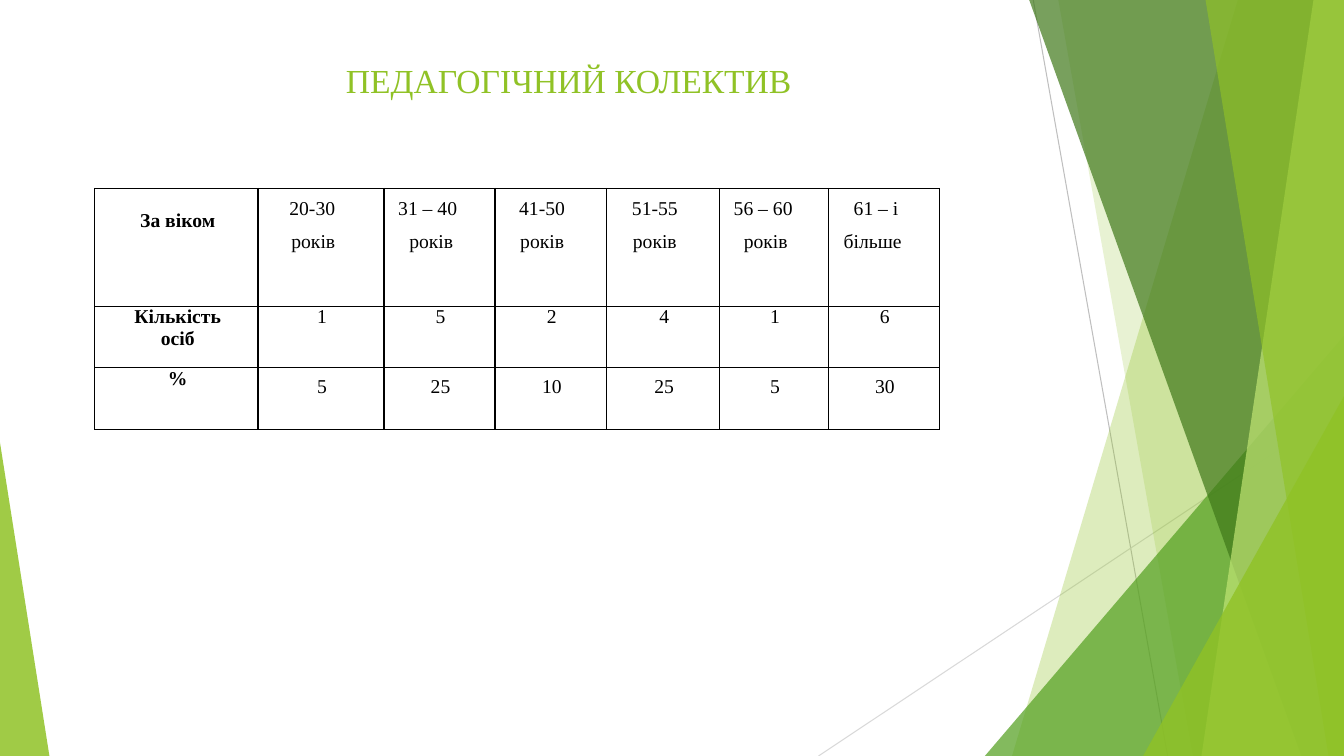
from dataclasses import dataclass

from lxml.etree import SubElement
from pptx import Presentation
from pptx.dml.color import RGBColor
from pptx.enum.shapes import MSO_CONNECTOR, MSO_SHAPE
from pptx.enum.text import PP_ALIGN
from pptx.oxml.ns import qn
from pptx.util import Inches, Pt


@dataclass(frozen=True)
class Theme:
    font: str = "Times New Roman"
    title_size: float = 24
    table_size: float = 14
    lime: str = "90C226"
    green: str = "54A021"
    forest: str = "3F7819"
    pale_lime: str = "C0E474"
    ray: str = "BFBFBF"
    light_ray: str = "D9D9D9"
    ink: str = "000000"


THEME = Theme()
SLIDE_WIDTH = Inches(13.333)
SLIDE_HEIGHT = Inches(7.5)

COLUMN_SHARES = (12.15, 9.38, 8.25, 8.32, 8.4, 8.1, 8.25)
ROW_SHARES = (15.6, 8.13, 8.13)
AGE_GROUPS = (
    (("20-30", 2.33), ("років", 2.48)),
    (("31 – 40", 1.05), ("років", 1.88)),
    (("41-50", 1.8), ("років", 1.88)),
    (("51-55", 1.88), ("років", 1.95)),
    (("56 – 60", 1.05), ("років", 1.8)),
    (("61 – і", 1.88), ("більше", 1.13)),
)
PEOPLE = (1, 5, 2, 4, 1, 6)
PERCENTS = (5, 25, 10, 25, 5, 30)


def across(percent):
    return round(SLIDE_WIDTH * percent / 100)


def down(percent):
    return round(SLIDE_HEIGHT * percent / 100)


def paint(shape, color, opacity):
    shape.shadow.inherit = False
    shape.fill.solid()
    shape.fill.fore_color.rgb = RGBColor.from_string(color)
    shape.line.fill.background()
    tint = shape.fill._xPr.find(qn("a:solidFill"))[0]
    SubElement(tint, qn("a:alpha"), val=str(opacity * 1000))


def add_ray(slide, start, end, color):
    ray = slide.shapes.add_connector(
        MSO_CONNECTOR.STRAIGHT,
        across(start[0]), down(start[1]), across(end[0]), down(end[1]),
    )
    ray.line.color.rgb = RGBColor.from_string(color)
    ray.line.width = Pt(0.75)
    SubElement(ray._element.spPr, qn("a:effectLst"))


def add_facet(slide, top, bottom, color, opacity):
    outline = slide.shapes.build_freeform(across(top), 0)
    outline.add_line_segments(
        [(across(100), 0), (across(100), down(100)), (across(bottom), down(100))]
    )
    paint(outline.convert_to_shape(), color, opacity)


def add_corner(slide, left, top, width, peak, color, opacity):
    corner = slide.shapes.add_shape(
        MSO_SHAPE.ISOSCELES_TRIANGLE,
        across(left), down(top), across(width), down(100 - top),
    )
    corner.adjustments[0] = peak
    paint(corner, color, opacity)


def style_text(paragraph, size, color, bold=False):
    for run in paragraph.runs:
        run.font.name = THEME.font
        run.font.size = Pt(size)
        run.font.bold = bold
        run.font.color.rgb = RGBColor.from_string(color)


def add_title(slide, text):
    title = slide.shapes.add_textbox(across(25), down(7.33), across(38.33), down(6.67))
    title.text_frame.word_wrap = True
    title.text_frame.text = text
    style_text(title.text_frame.paragraphs[0], THEME.title_size, THEME.lime)


def frame_cell(cell):
    properties = cell._tc.get_or_add_tcPr()
    for side in ("a:lnL", "a:lnR", "a:lnT", "a:lnB"):
        border = SubElement(properties, qn(side), w=str(Pt(1)))
        SubElement(SubElement(border, qn("a:solidFill")), qn("a:srgbClr"), val=THEME.ink)
    cell.fill.background()
    cell.margin_left = cell.margin_right = cell.margin_top = cell.margin_bottom = 0


def indent(paragraph, left, right=0):
    properties = paragraph._p.get_or_add_pPr()
    properties.set("marL", str(across(left)))
    properties.set("marR", str(across(right)))
    properties.set("indent", "0")


def fill_age(cell, lines):
    cell.text_frame.text = "\n".join(text for text, _ in lines)
    for paragraph, (_, left) in zip(cell.text_frame.paragraphs, lines):
        indent(paragraph, left)
        paragraph.line_spacing = Pt(22.4)
        style_text(paragraph, THEME.table_size, THEME.ink)
    cell.text_frame.paragraphs[-1].space_before = Pt(1)


def fill_centered(cell, text, left, right=0, bold=False, line_height=None):
    cell.text_frame.text = str(text)
    paragraph = cell.text_frame.paragraphs[0]
    paragraph.alignment = PP_ALIGN.CENTER
    indent(paragraph, left, right)
    if line_height:
        paragraph.line_spacing = Pt(line_height)
    style_text(paragraph, THEME.table_size, THEME.ink, bold)


def add_staff_table(slide):
    staff = slide.shapes.add_table(
        len(ROW_SHARES), len(COLUMN_SHARES),
        across(7.05), down(24.93), across(sum(COLUMN_SHARES)), down(sum(ROW_SHARES)),
    ).table
    staff.first_row = staff.horz_banding = False
    for column, share in zip(staff.columns, COLUMN_SHARES):
        column.width = across(share)
    for row, share in zip(staff.rows, ROW_SHARES):
        row.height = down(share)
    for cell in staff.iter_cells():
        frame_cell(cell)

    staff.cell(0, 0).margin_top = down(2.9)
    for row, (label, side) in enumerate(
        (("За віком", 1.6), ("Кількість осіб", 1.65), ("%", 0))
    ):
        fill_centered(staff.cell(row, 0), label, side + 0.2, side, bold=True)
    for column, (age, people, percent) in enumerate(zip(AGE_GROUPS, PEOPLE, PERCENTS), 1):
        fill_age(staff.cell(0, column), age)
        fill_centered(staff.cell(1, column), people, 0.15)
        fill_centered(staff.cell(2, column), percent, 0.15, line_height=21.7)


def add_backdrop(slide):
    add_ray(slide, (76.88, 0), (86.88, 100), THEME.ray)
    add_ray(slide, (100, 53.73), (60.9, 100), THEME.light_ray)
    add_facet(slide, 92.1, 75.3, THEME.lime, 30)
    add_facet(slide, 78.75, 88.75, THEME.lime, 20)
    add_corner(slide, 73.28, 44.4, 26.72, 1, THEME.green, 72)
    add_facet(slide, 76.58, 96.83, THEME.forest, 70)
    add_facet(slide, 97.73, 89.4, THEME.pale_lime, 70)
    add_facet(slide, 89.7, 98.85, THEME.lime, 65)
    add_corner(slide, 85.05, 52.4, 14.95, 1, THEME.lime, 80)
    add_corner(slide, 0, 58.53, 3.68, 0, THEME.lime, 85)


def main():
    deck = Presentation()
    deck.slide_width = SLIDE_WIDTH
    deck.slide_height = SLIDE_HEIGHT
    slide = deck.slides.add_slide(deck.slide_layouts[6])
    add_backdrop(slide)
    add_title(slide, "ПЕДАГОГІЧНИЙ КОЛЕКТИВ")
    add_staff_table(slide)
    deck.save("out.pptx")


if __name__ == "__main__":
    main()
